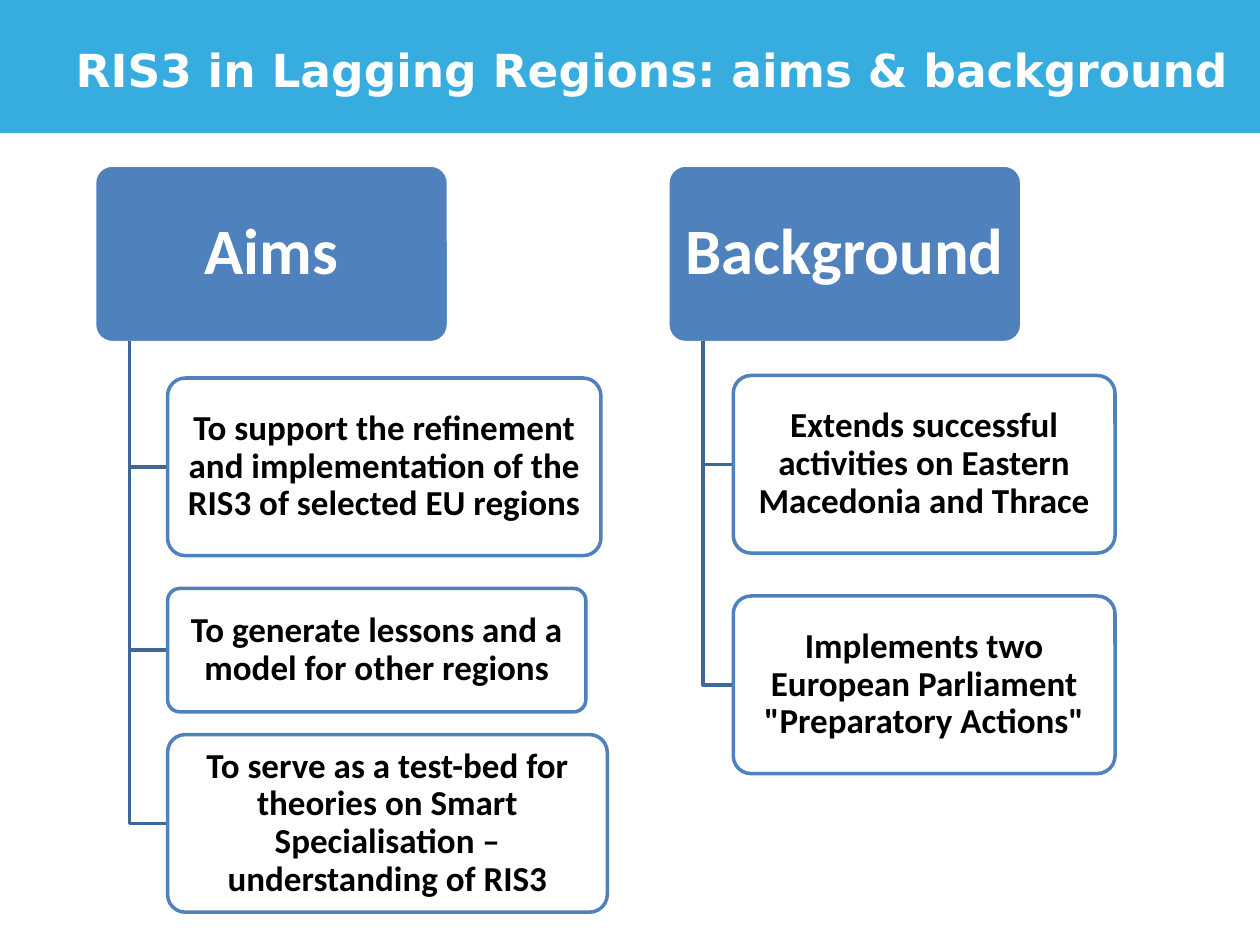
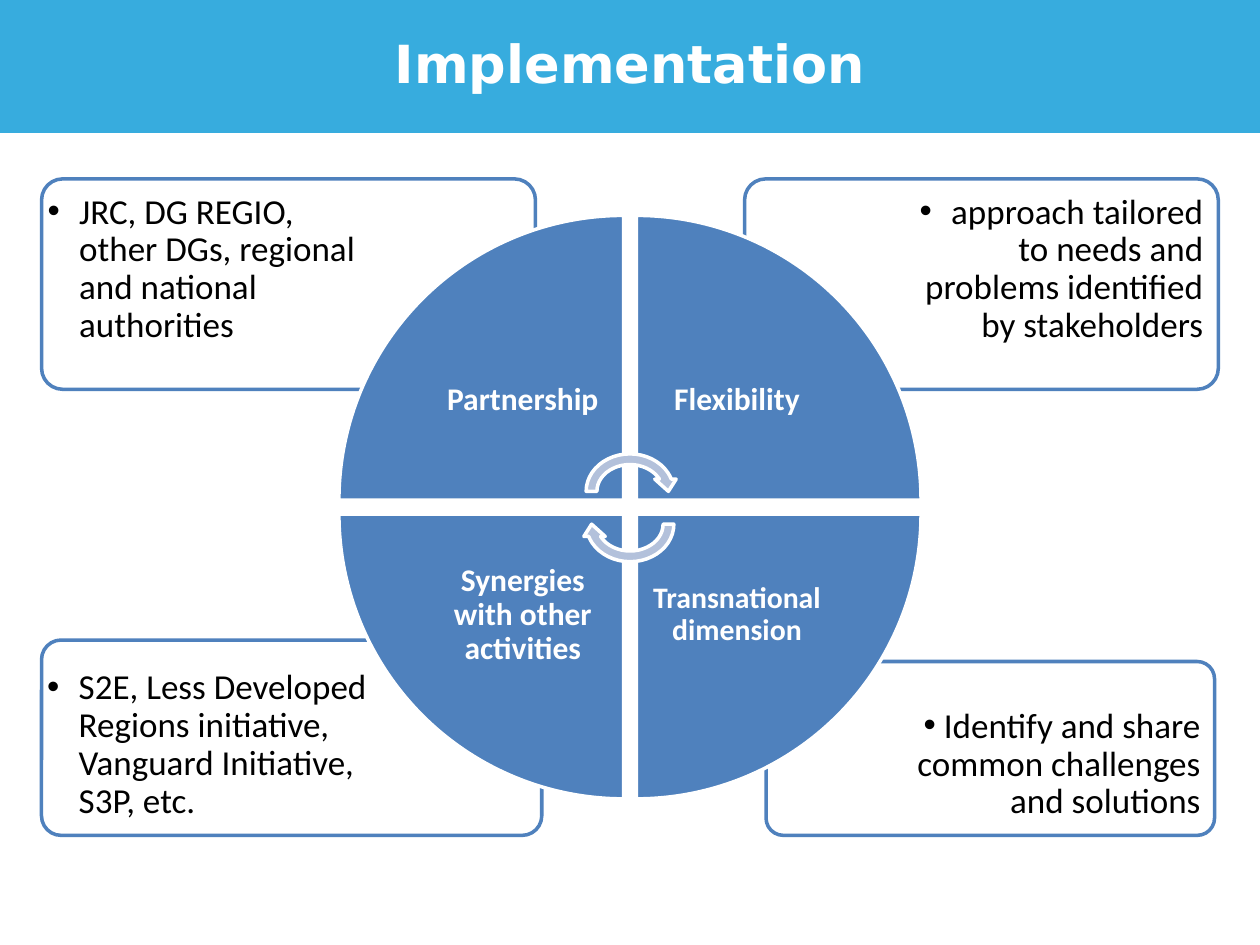
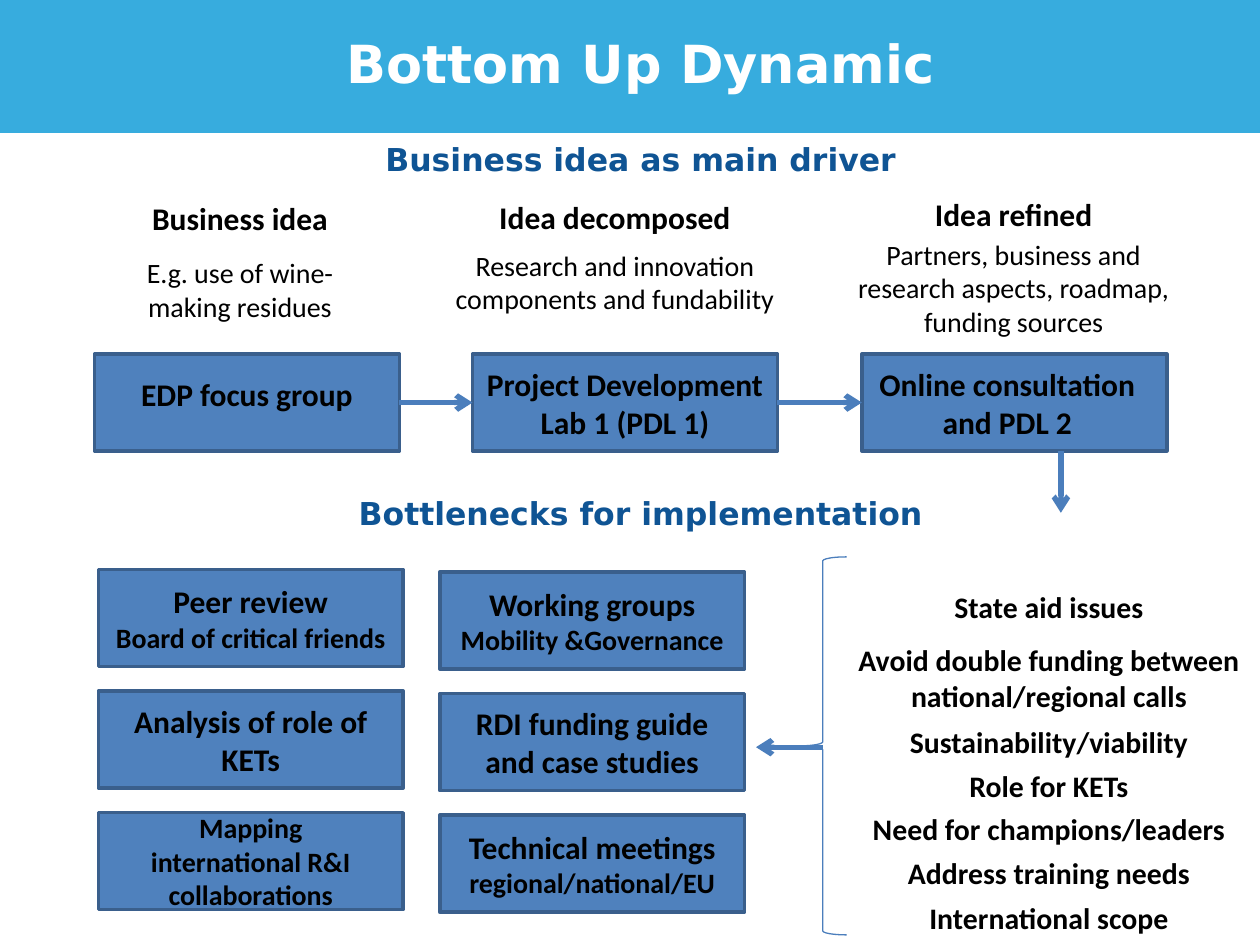
import lxml.etree
import pptx
import pptx.dml.color
import pptx.enum.shapes
import pptx.enum.text
import pptx.oxml.ns
import pptx.util

Inches = pptx.util.Inches
SHAPE = pptx.enum.shapes.MSO_SHAPE
ALIGN = pptx.enum.text.PP_ALIGN
ANCHOR = pptx.enum.text.MSO_ANCHOR
qn = pptx.oxml.ns.qn

COLORS = {
    "band": "37ACDE", "white": "FFFFFF", "black": "000000",
    "blue": "4F81BD", "blue_edge": "3A5F8C", "tree": "3F6797",
    "arrow": "4B7EBC", "cycle": "B3C1DB", "heading": "0F5494",
}
BODY_FONT = "Calibri"
TITLE_FONT = "DejaVu Sans"
DEFAULT_INSETS = (0.1, 0.05, 0.1, 0.05)


def rgb(name):
    return pptx.dml.color.RGBColor.from_string(COLORS[name])


def write_text(frame, text, size=18, font=BODY_FONT, color="black", bold=False,
               align=ALIGN.CENTER, spacing=None, before=None, bullet_indent=None,
               same_paragraph=False):
    """Write text as the next paragraph, or as one more run of the last one."""
    paragraph = frame.paragraphs[-1]
    if paragraph.runs and not same_paragraph:
        paragraph = frame.add_paragraph()
    paragraph.alignment = align
    if spacing:
        paragraph.line_spacing = spacing
    if before:
        paragraph.space_before = pptx.util.Pt(before)
    if bullet_indent is not None:
        properties = paragraph._p.get_or_add_pPr()
        properties.set("marL", str(Inches(bullet_indent)))
        properties.set("indent", str(-Inches(bullet_indent)))
        lxml.etree.SubElement(properties, qn("a:buFont")).set("typeface", "Arial")
        lxml.etree.SubElement(properties, qn("a:buChar")).set("char", "•")
    run = paragraph.add_run()
    run.text = text
    run.font.size = pptx.util.Pt(size)
    run.font.name = font
    run.font.bold = bold
    run.font.color.rgb = rgb(color)


class Deck:
    def __init__(self):
        self.presentation = pptx.Presentation()
        self.presentation.slide_width = Inches(10)
        self.presentation.slide_height = Inches(7.5)
        self.slide = None

    def new_slide(self, title, left, top, width, size=30, align=ALIGN.CENTER):
        self.slide = self.presentation.slides.add_slide(self.presentation.slide_layouts[6])
        self.shape(SHAPE.RECTANGLE, 0, 0, 10, 1.05, fill="band", line="band", weight=0.75)
        self.heading(title, left, top, width, size=size, color="white", align=align)

    def heading(self, text, left, top, width, **text_format):
        frame = self.text_box(left, top, width, 0.5, insets=(0, 0, 0, 0))
        write_text(frame, text, font=TITLE_FONT, bold=True, **text_format)

    def set_frame(self, frame, insets, anchor):
        frame.word_wrap = True
        frame.vertical_anchor = anchor
        (frame.margin_left, frame.margin_top,
         frame.margin_right, frame.margin_bottom) = map(Inches, insets)
        return frame

    def text_box(self, left, top, width, height, insets=DEFAULT_INSETS, anchor=ANCHOR.TOP):
        box = self.slide.shapes.add_textbox(*map(Inches, (left, top, width, height)))
        return self.set_frame(box.text_frame, insets, anchor)

    def paint(self, shape, fill, line, weight):
        shape.shadow.inherit = False
        if fill:
            shape.fill.solid()
            shape.fill.fore_color.rgb = rgb(fill)
        else:
            shape.fill.background()
        shape.line.color.rgb = rgb(line)
        shape.line.width = pptx.util.Pt(weight)

    def shape(self, kind, left, top, width, height, fill="blue", line="white", weight=2,
              rotation=0, insets=DEFAULT_INSETS, anchor=ANCHOR.MIDDLE):
        shape = self.slide.shapes.add_shape(kind, *map(Inches, (left, top, width, height)))
        self.paint(shape, fill, line, weight)
        shape.rotation = rotation
        self.set_frame(shape.text_frame, insets, anchor)
        return shape

    def rounded(self, left, top, width, height, **style):
        shape = self.shape(SHAPE.ROUNDED_RECTANGLE, left, top, width, height, **style)
        shape.adjustments[0] = 0.1
        return shape

    def elbow(self, left, top, right, bottom):
        builder = self.slide.shapes.build_freeform(Inches(left), Inches(top))
        corners = [(left, bottom), (right, bottom)]
        builder.add_line_segments([(Inches(x), Inches(y)) for x, y in corners], close=False)
        self.paint(builder.convert_to_shape(), None, "tree", 2)

    def arrow(self, x1=0, y1=0, x2=0, y2=0, source=None, target=None):
        line = self.slide.shapes.add_connector(
            pptx.enum.shapes.MSO_CONNECTOR.STRAIGHT, *map(Inches, (x1, y1, x2, y2)))
        if source is not None:
            line.begin_connect(source, 3)
        if target is not None:
            line.end_connect(target, 1)
        line.line.color.rgb = rgb("arrow")
        line.line.width = pptx.util.Pt(3)
        properties = line._element.spPr
        tail = lxml.etree.SubElement(properties.find(qn("a:ln")), qn("a:tailEnd"))
        tail.set("type", "arrow")
        lxml.etree.SubElement(properties, qn("a:effectLst"))

    def process_box(self, left, top, lines, insets=DEFAULT_INSETS):
        box = self.shape(SHAPE.RECTANGLE, left, top, 2.42, 0.77,
                         line="blue_edge", insets=insets)
        for text, size, same_paragraph in lines:
            write_text(box.text_frame, text, size=size, bold=True,
                       same_paragraph=same_paragraph)
        return box


def aims_slide(deck):
    deck.new_slide("RIS3 in Lagging Regions: aims & background", 0.6, 0.33, 9.4,
                   size=26, align=ALIGN.LEFT)
    # Each branch: header, its left, left of the children, children (top, width, height, text)
    branches = [
        ("Aims", 0.75, 1.33, [
            (3, 3.44, 1.41, "To support the refinement and implementation of the RIS3 "
                            "of selected EU regions"),
            (4.67, 3.32, 0.98, "To generate lessons and a model for other regions"),
            (5.83, 3.49, 1.41, "To serve as a test-bed for theories on Smart "
                               "Specialisation – understanding of RIS3")]),
        ("Background", 5.3, 5.82, [
            (2.98, 3.03, 1.41, "Extends successful activities on Eastern Macedonia "
                               "and Thrace"),
            (4.73, 3.03, 1.41, 'Implements two European Parliament '
                               '"Preparatory Actions"')]),
    ]
    for name, left, child_left, children in branches:
        header = deck.rounded(left, 1.31, 2.81, 1.41, insets=(0.08, 0.05, 0.08, 0.05))
        write_text(header.text_frame, name, size=37, color="white", bold=True, spacing=0.9)
        for top, width, height, text in children:
            deck.elbow(left + 0.28, 2.71, child_left, top + height / 2)
            child = deck.rounded(child_left, top, width, height, fill="white", line="blue",
                                 insets=(0.04, 0.03, 0.04, 0.03))
            write_text(child.text_frame, text, size=20, bold=True, spacing=0.9)


def implementation_slide(deck):
    deck.new_slide("Implementation", 0.52, 0.25, 8.96)
    # Corner notes: position, side insets, anchor, alignment, bullet indent, text
    notes = [
        (6.08, 5.25, 3.56, 1.38, 1.06, 0.07, ANCHOR.BOTTOM, ALIGN.RIGHT, 0,
         " Identify and share common challenges and solutions"),
        (0.33, 5.08, 3.97, 1.55, 0, 1.25, ANCHOR.BOTTOM, ALIGN.LEFT, 0.25,
         "S2E, Less Developed Regions initiative, Vanguard Initiative, S3P, etc."),
        (5.91, 1.42, 3.76, 1.67, 1.11, 0.07, ANCHOR.TOP, ALIGN.RIGHT, 0.25,
         "approach tailored to needs and problems identified by stakeholders"),
        (0.33, 1.42, 3.92, 1.67, 0, 1.25, ANCHOR.TOP, ALIGN.LEFT, 0.25,
         "JRC, DG REGIO, other DGs, regional and national authorities"),
    ]
    for left, top, width, height, inset_left, inset_right, anchor, align, indent, text in notes:
        note = deck.rounded(left, top, width, height, fill="white", line="blue",
                            insets=(inset_left, 0.07, inset_right, 0.07), anchor=anchor)
        write_text(note.text_frame, text, size=20, align=align, spacing=0.9,
                   bullet_indent=indent)

    # Four wedges, clockwise from top left
    wedges = [
        ("Partnership", 2.69, 1.71, 18), ("Flexibility", 5.05, 1.71, 18),
        ("Transnational dimension", 5.05, 4.08, 17),
        ("Synergies with other activities", 2.69, 4.08, 18),
    ]
    for index, (text, left, top, size) in enumerate(wedges):
        deck.shape(SHAPE.PIE_WEDGE, left, top, 2.26, 2.26, rotation=90 * index)
        label = deck.text_box(3.35 if left < 5 else left, 2.38 if top < 4 else top, 1.6, 1.6,
                              insets=(0.13,) * 4, anchor=ANCHOR.MIDDLE)
        write_text(label, text, size=size, color="white", bold=True, spacing=0.9)

    # Cycle arrows in the centre
    for top, rotation in ((3.56, 0), (3.82, 180)):
        deck.shape(SHAPE.CIRCULAR_ARROW, 4.61, top, 0.78, 0.68, fill="cycle",
                   rotation=rotation)


def bottom_up_slide(deck):
    deck.new_slide("Bottom Up Dynamic", 0.42, 0.25, 9.33)
    deck.heading("Business idea as main driver", 0.42, 1.11, 9.33, color="heading")
    deck.heading("Bottlenecks for implementation", 0.42, 3.92, 9.33, color="heading")

    # Stage descriptions: left, top, width, gap, title, detail
    stages = [
        (0.78, 1.53, 2.25, 11, "Business idea", "E.g. use of wine-making residues"),
        (3.42, 1.52, 2.92, 7.3, "Idea decomposed",
         "Research and innovation components and fundability"),
        (6.67, 1.5, 2.75, 2.4, "Idea refined",
         "Partners, business and research aspects, roadmap, funding sources"),
    ]
    for left, top, width, gap, title, detail in stages:
        frame = deck.text_box(left, top, width, 1.1)
        write_text(frame, title, bold=True)
        write_text(frame, detail, size=16, before=gap)

    # Stage boxes joined by arrows
    steps = [
        (0.75, "EDP focus group", (0.1, 0.05, 0.1, 0.18)),
        (3.75, "Project Development Lab 1 (PDL 1)", DEFAULT_INSETS),
        (6.84, "Online consultation and PDL 2", (0.1, 0.05, 0.21, 0.05)),
    ]
    boxes = [deck.process_box(left, 2.81, [(text, 18, False)], insets)
             for left, text, insets in steps]
    for source, target in zip(boxes, boxes[1:]):
        deck.arrow(source=source, target=target)
    deck.arrow(8.42, 3.58, 8.42, 4.07)

    # Grid of responses: one list per column, each with side inset and lines
    columns = [
        [(0.1, [("Peer review", 18, False), ("Board of critical friends", 16, False)]),
         (0.19, [("Analysis of role of KETs", 18, False)]),
         (0.19, [("Mapping international R&I collaborations", 16, False)])],
        [(0.1, [("Working groups ", 18, False), ("Mobility &Governance", 16, True)]),
         (0.19, [("RDI funding guide and case studies", 18, False)]),
         (0.1, [("Technical meetings ", 18, False), ("regional/national/EU", 16, True)])],
    ]
    for column, responses in enumerate(columns):
        for row, (inset, lines) in enumerate(responses):
            deck.process_box(0.78 + 2.71 * column, 4.52 + 0.02 * column + 0.965 * row,
                             lines, insets=(inset, 0, inset, 0))

    # Bottlenecks, with the space before each
    bottlenecks = [
        ("State aid issues", None),
        ("Avoid double funding between national/regional calls", 10),
        ("Sustainability/viability", 6), ("Role for KETs", 5),
        ("Need for champions/leaders", 4), ("Address training needs", 5),
        ("International scope", 5),
    ]
    frame = deck.text_box(6.65, 4.62, 3.35, 2.85)
    for text, gap in bottlenecks:
        write_text(frame, text, size=17, bold=True, before=gap)
    deck.arrow(6.53, 5.93, 6, 5.93)
    deck.shape(SHAPE.LEFT_BRACE, 6.34, 4.42, 0.38, 3, fill=None, line="arrow", weight=0.75)


def main():
    deck = Deck()
    aims_slide(deck)
    implementation_slide(deck)
    bottom_up_slide(deck)
    deck.presentation.save("out.pptx")


if __name__ == "__main__":
    main()
